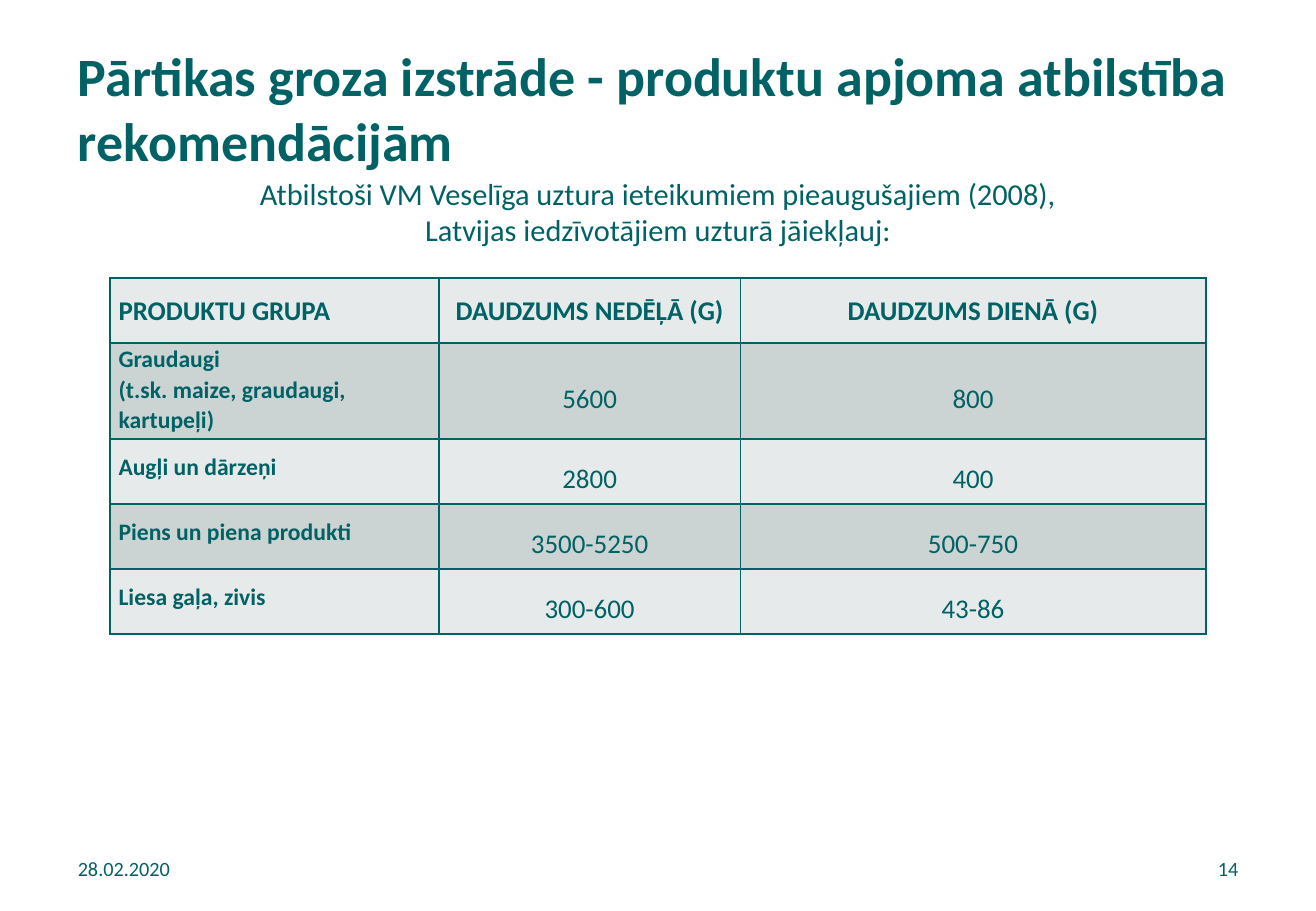
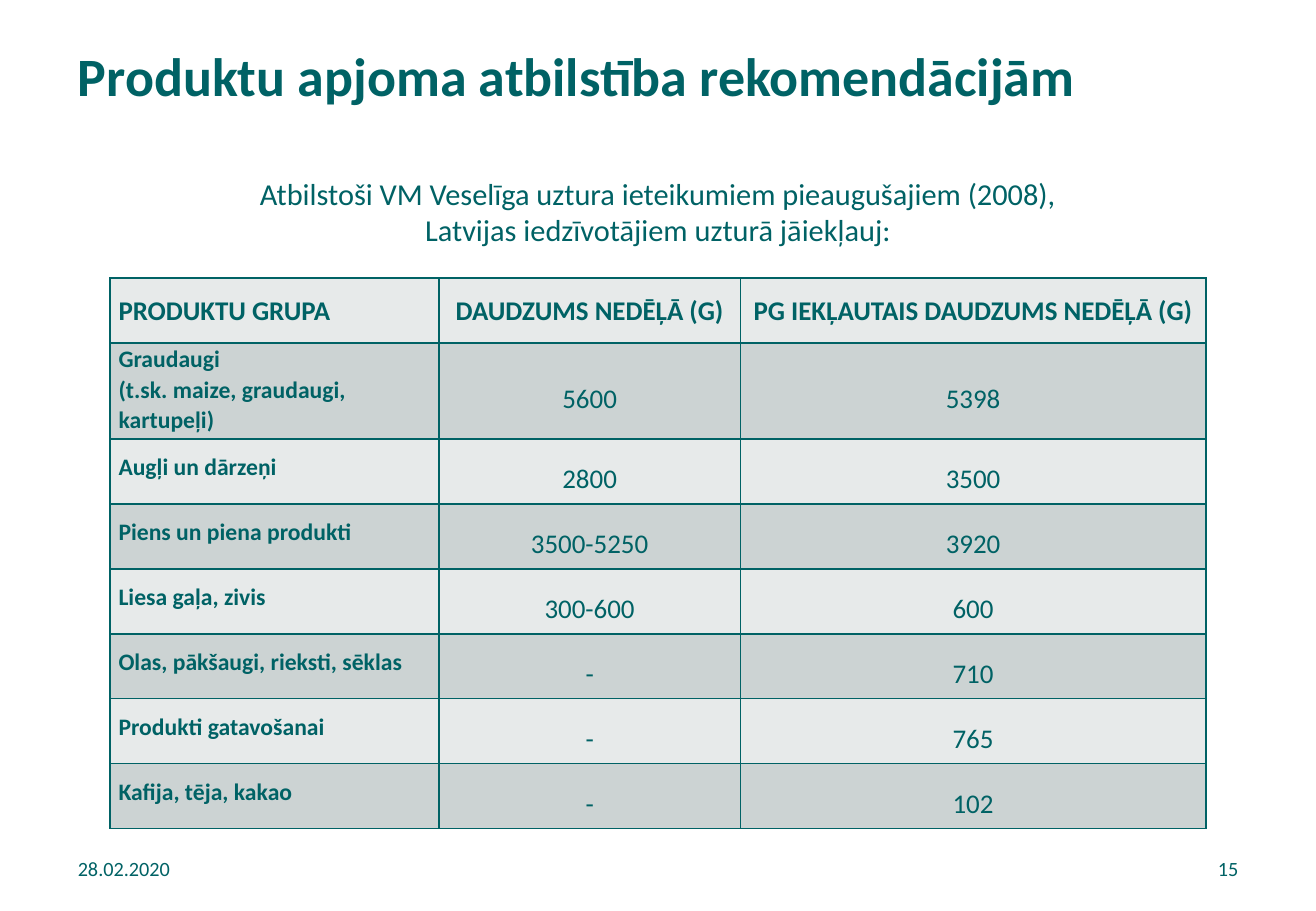
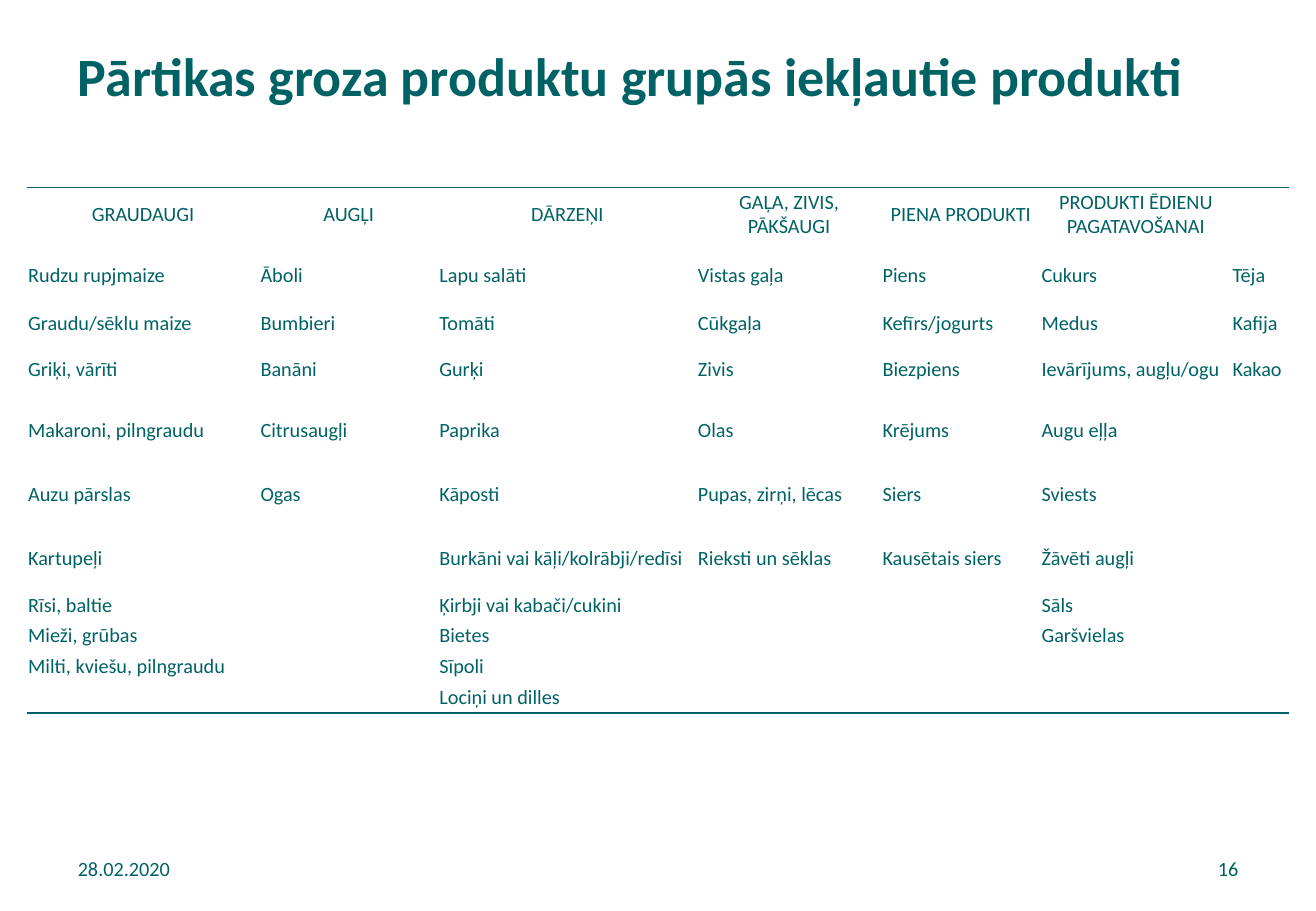
from lxml import etree
from pptx import Presentation
from pptx.dml.color import RGBColor
from pptx.enum.text import MSO_ANCHOR, MSO_AUTO_SIZE, PP_ALIGN
from pptx.oxml.ns import qn
from pptx.util import Pt

LEFT, CENTER, RIGHT, JUSTIFY = PP_ALIGN.LEFT, PP_ALIGN.CENTER, PP_ALIGN.RIGHT, PP_ALIGN.JUSTIFY
TOP, MIDDLE = MSO_ANCHOR.TOP, MSO_ANCHOR.MIDDLE
NO_FIT = MSO_AUTO_SIZE.NONE
TITLE_SLIDE, TITLE_ONLY = 0, 5
PLAIN_TABLE_STYLE = "{2D5ABB26-0587-4C30-8999-92F81FD0307C}"


class Theme:
    font = "Calibri"
    ink = RGBColor(0x00, 0x62, 0x65)
    bands = (RGBColor(0xE7, 0xEA, 0xEA), RGBColor(0xCC, 0xD3, 0xD3))
    title, subtitle, table, group, small = 32, 18, 16, 14, 12
    margin, content_width = 39, 702


def write_text(frame, lines, size, bold=False, align=LEFT, spacing=1.0):
    """Fill a text frame with one paragraph per line."""
    for index, line in enumerate(lines):
        paragraph = frame.paragraphs[0] if index == 0 else frame.add_paragraph()
        paragraph.alignment = align
        paragraph.line_spacing = spacing
        paragraph.space_before = Pt(0)
        if not line:
            etree.SubElement(paragraph._p, qn("a:endParaRPr"), sz=str(size * 100))
            continue
        run = paragraph.add_run()
        run.text = line
        run.font.name = Theme.font
        run.font.size = Pt(size)
        run.font.bold = bold
        run.font.color.rgb = Theme.ink


def add_grid(slide, left, top, widths, heights, inset, border_rule, fill_rule):
    """Add a table; the rules give each row's bordered edges and fill."""
    frame = slide.shapes.add_table(len(heights), len(widths), Pt(left), Pt(top),
                                   Pt(sum(widths)), Pt(sum(heights)))
    table = frame.table
    table.first_row = table.horz_banding = False
    table._tbl.tblPr.find(qn("a:tableStyleId")).text = PLAIN_TABLE_STYLE
    for column, width in zip(table.columns, widths):
        column.width = Pt(width)
    for row_index, row in enumerate(table.rows):
        row.height = Pt(heights[row_index])
        for cell in row.cells:
            cell.margin_left = cell.margin_right = Pt(inset)
            cell.margin_top = cell.margin_bottom = 0
            properties = cell._tc.get_or_add_tcPr()
            for edge in border_rule(row_index):
                line = etree.SubElement(properties, qn("a:ln" + edge), w=str(Pt(1)))
                fill = etree.SubElement(line, qn("a:solidFill"))
                etree.SubElement(fill, qn("a:srgbClr"), val=str(Theme.ink))
            color = fill_rule(row_index)
            if color is None:
                cell.fill.background()
            else:
                cell.fill.solid()
                cell.fill.fore_color.rgb = color
    return table


# Content
DATE = "28.02.2020"
FIRST_NUMBER = 14
INTRODUCTION = ["Atbilstoši VM Veselīga uztura ieteikumiem pieaugušajiem (2008),",
                "Latvijas iedzīvotājiem uzturā jāiekļauj:"]
GROUPS = [
    (["Graudaugi", "(t.sk. maize, graudaugi, kartupeļi)"], "5600"),
    (["Augļi un dārzeņi"], "2800"),
    (["Piens un piena produkti"], "3500-5250"),
    (["Liesa gaļa, zivis"], "300-600"),
    (["Olas, pākšaugi, rieksti, sēklas"], "-"),
    (["Produkti gatavošanai"], "-"),
    (["Kafija, tēja, kakao"], "-"),
]
AMOUNT_SLIDES = [
    ("Pārtikas groza izstrāde - produktu apjoma atbilstība rekomendācijām",
     "DAUDZUMS DIENĀ (G)", ["800", "400", "500-750", "43-86"]),
    ("Produktu apjoma atbilstība rekomendācijām",
     "PG IEKĻAUTAIS DAUDZUMS NEDĒĻĀ (G)",
     ["5398", "3500", "3920", "600", "710", "765", "102"]),
]
PRODUCTS_TITLE = "Pārtikas groza produktu grupās iekļautie produkti"
# Each product column: width, heading, products
PRODUCTS = [
    (137.75, "GRAUDAUGI",
     ["Rudzu rupjmaize", "Graudu/sēklu maize", "Griķi, vārīti", "Makaroni, pilngraudu",
      "Auzu pārslas", "Kartupeļi", "Rīsi, baltie", "Mieži, grūbas",
      "Milti, kviešu, pilngraudu"]),
    (106, "AUGĻI", ["Āboli", "Bumbieri", "Banāni", "Citrusaugļi", "Ogas"]),
    (153.25, "DĀRZEŅI",
     ["Lapu salāti", "Tomāti", "Gurķi", "Paprika", "Kāposti",
      "Burkāni vai kāļi/kolrābji/redīsi", "Ķirbji vai kabači/cukini", "Bietes",
      "Sīpoli", "Lociņi un dilles"]),
    (109.5, "GAĻA, ZIVIS, PĀKŠAUGI",
     ["Vistas gaļa", "Cūkgaļa", "Zivis", "Olas", "Pupas, zirņi, lēcas",
      "Rieksti un sēklas"]),
    (94.25, "PIENA PRODUKTI",
     ["Piens", "Kefīrs/jogurts", "Biezpiens", "Krējums", "Siers", "Kausētais siers"]),
    (113.25, "PRODUKTI ĒDIENU PAGATAVOŠANAI",
     ["Cukurs", "Medus", "Ievārījums, augļu/ogu", "Augu eļļa", "Sviests",
      "Žāvēti augļi", "Sāls", "Garšvielas"]),
    (34, "", ["Tēja", "Kafija", "Kakao"]),
]

presentation = Presentation()
presentation.slide_width = Pt(780)
presentation.slide_height = Pt(540)

# Slides with recommended amounts
for title, last_heading, last_values in AMOUNT_SLIDES:
    slide = presentation.slides.add_slide(presentation.slide_layouts[TITLE_SLIDE])
    slide.shapes.title.text_frame.text = title

    subtitle = slide.placeholders[1]
    subtitle.left, subtitle.top = Pt(Theme.margin), Pt(100)
    subtitle.width, subtitle.height = Pt(Theme.content_width), Pt(397)
    subtitle.text_frame.auto_size = NO_FIT
    subtitle.text_frame.vertical_anchor = TOP
    write_text(subtitle.text_frame, INTRODUCTION, Theme.subtitle, align=CENTER)

    heights = [38.5, 57] + [38.5] * (len(last_values) - 1)
    table = add_grid(slide, 65.25, 164.75, [195, 178.5, 276], heights, 5,
                     lambda row: "LRTB", lambda row: Theme.bands[row % 2])
    headings = ["PRODUKTU GRUPA", "DAUDZUMS NEDĒĻĀ (G)", last_heading]
    for column, heading in enumerate(headings):
        write_text(table.cell(0, column).text_frame, [heading], Theme.table, True,
                   CENTER if column else JUSTIFY, 1.5)
    for row, ((names, weekly), last_value) in enumerate(zip(GROUPS, last_values), 1):
        write_text(table.cell(row, 0).text_frame, names, Theme.group, True,
                   spacing=1.07 if len(names) > 1 else 1.5)
        for column, value in enumerate((weekly, last_value), 1):
            cell = table.cell(row, column)
            cell.vertical_anchor = MIDDLE
            write_text(cell.text_frame, [value], Theme.table, align=CENTER, spacing=1.5)

# Slide with the products of each group
slide = presentation.slides.add_slide(presentation.slide_layouts[TITLE_ONLY])
slide.shapes.title.text_frame.text = PRODUCTS_TITLE
heights = [32.5, 39.5, 18.25, 36, 36, 39.5, 37] + [18.25] * 4
last_row = len(heights) - 1
table = add_grid(slide, 16, 111, [width for width, _, _ in PRODUCTS], heights, 0.72,
                 lambda row: {0: "T", last_row: "B"}.get(row, ""), lambda row: None)
for column, (_, heading, products) in enumerate(PRODUCTS):
    texts = [heading] + products + [""] * (last_row - len(products))
    for row, text in enumerate(texts):
        cell = table.cell(row, column)
        cell.vertical_anchor = MIDDLE
        write_text(cell.text_frame, [text], Theme.small, align=LEFT if row else CENTER)

# Title style and footer of every slide
for number, slide in enumerate(presentation.slides, FIRST_NUMBER):
    title = slide.shapes.title
    text = title.text_frame.text
    title.left, title.top = Pt(Theme.margin), Pt(21.5)
    title.width, title.height = Pt(Theme.content_width), Pt(61)
    title.text_frame.clear()
    title.text_frame.auto_size = NO_FIT
    title.text_frame.vertical_anchor = TOP
    write_text(title.text_frame, [text], Theme.title, True)

    footer_width = 182
    number_left = Theme.margin + Theme.content_width - footer_width
    for left, text, align in ((Theme.margin, DATE, LEFT), (number_left, str(number), RIGHT)):
        footer = slide.shapes.add_textbox(Pt(left), Pt(500.5), Pt(footer_width), Pt(29))
        footer.text_frame.word_wrap = True
        footer.text_frame.vertical_anchor = MIDDLE
        write_text(footer.text_frame, [text], Theme.small, align=align)

presentation.save("out.pptx")
